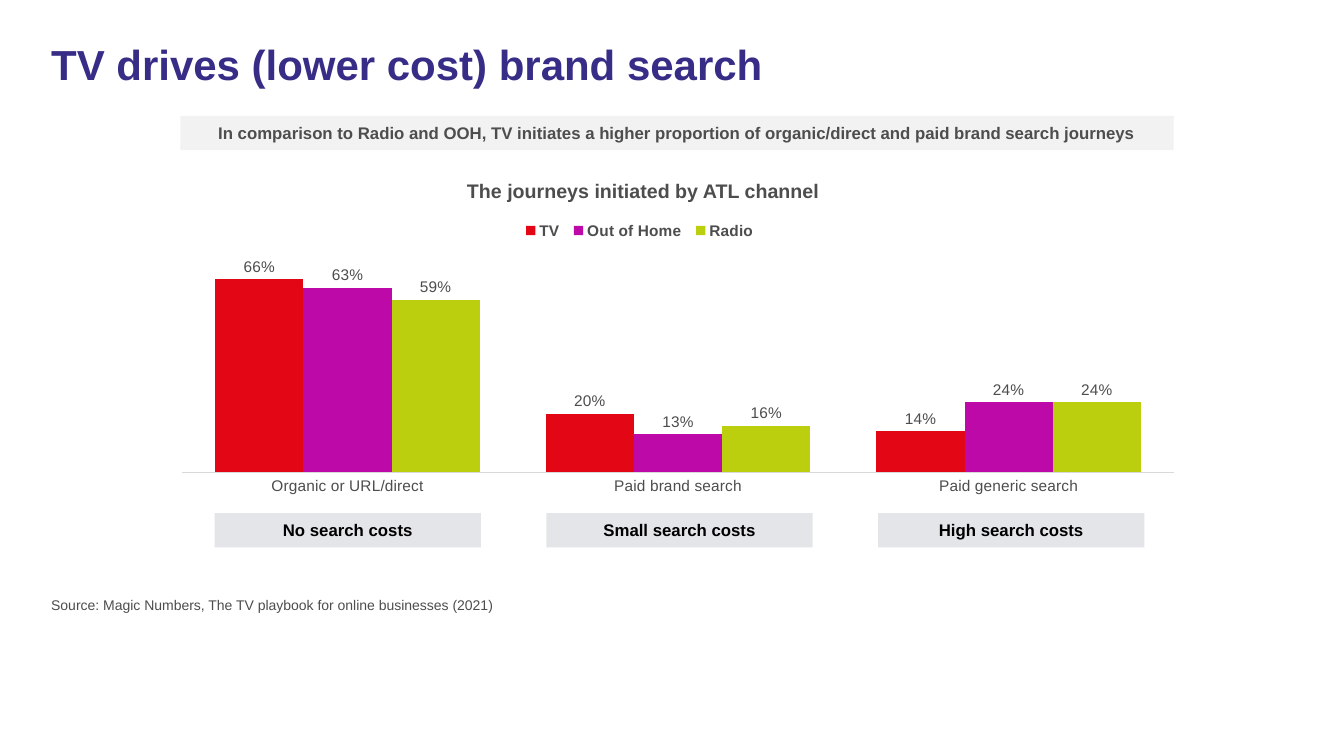
from lxml import etree
from pptx import Presentation
from pptx.chart.data import CategoryChartData
from pptx.dml.color import RGBColor
from pptx.enum.chart import (XL_CHART_TYPE, XL_LABEL_POSITION, XL_LEGEND_POSITION,
                             XL_TICK_LABEL_POSITION, XL_TICK_MARK)
from pptx.enum.shapes import MSO_SHAPE
from pptx.enum.text import MSO_ANCHOR, PP_ALIGN
from pptx.oxml.ns import qn
from pptx.util import Inches, Pt

COLUMNS = XL_CHART_TYPE.COLUMN_CLUSTERED
OUTSIDE_END = XL_LABEL_POSITION.OUTSIDE_END
LEGEND_BOTTOM = XL_LEGEND_POSITION.BOTTOM
NO_TICK = XL_TICK_MARK.NONE
NO_TICK_LABELS = XL_TICK_LABEL_POSITION.NONE
RECTANGLE = MSO_SHAPE.RECTANGLE
TOP, MIDDLE = MSO_ANCHOR.TOP, MSO_ANCHOR.MIDDLE
LEFT, CENTER = PP_ALIGN.LEFT, PP_ALIGN.CENTER

FONT = "Arial"
GREY, INDIGO, BLACK = "4D4D4D", "372D87", "000000"
MARGIN, TEXT_WIDTH = 0.41, 12.4
BAR_HEIGHT = 0.34

CATEGORIES = ["Organic or URL/direct", "Paid brand search", "Paid generic search"]
CHANNELS = [
    ("TV", "E30615", (0.66, 0.20, 0.14)),
    ("Out of Home", "BD09A7", (0.63, 0.13, 0.24)),
    ("Radio", "BCCF0F", (0.59, 0.16, 0.24)),
]
COSTS = ["No search costs", "Small search costs", "High search costs"]


def color(hex_string):
    return RGBColor.from_string(hex_string)


def style_font(font, size, hex_string, bold=False):
    font.name = FONT
    font.size = Pt(size)
    font.bold = bold
    font.color.rgb = color(hex_string)


def write(shape, text, size, hex_string, bold, align, anchor):
    frame = shape.text_frame
    frame.word_wrap = True
    frame.vertical_anchor = anchor
    frame.text = text
    para = frame.paragraphs[0]
    para.alignment = align
    style_font(para.runs[0].font, size, hex_string, bold)
    return para


def add_text(page, box, text, size, hex_string, bold=False, align=LEFT):
    shape = page.shapes.add_textbox(*map(Inches, box))
    return write(shape, text, size, hex_string, bold, align, TOP)


def add_bar(page, box, text, fill, hex_string):
    """Add a flat filled strip with a bold centred caption."""
    bar = page.shapes.add_shape(RECTANGLE, *map(Inches, box))
    bar.shadow.inherit = False
    bar.fill.solid()
    bar.fill.fore_color.rgb = color(fill)
    bar.line.fill.background()
    write(bar, text, 12, hex_string, True, CENTER, MIDDLE)


def place(parent, before, shares, inner=False):
    """Fix a chart part at x, y, width, height given as shares of the chart."""
    for old in parent.findall(qn("c:layout")):
        parent.remove(old)
    layout = etree.Element(qn("c:layout"))
    manual = etree.SubElement(layout, qn("c:manualLayout"))
    settings = [("layoutTarget", "inner")] if inner else []
    settings += [("xMode", "edge"), ("yMode", "edge")]
    settings += zip("xywh", map(str, shares))
    for name, value in settings:
        etree.SubElement(manual, qn("c:" + name)).set("val", value)
    parent.find(qn(before)).addprevious(layout)


def add_journey_chart(page, box):
    data = CategoryChartData(number_format="0%")
    data.categories = CATEGORIES
    for name, _, values in CHANNELS:
        data.add_series(name, values)
    chart = page.shapes.add_chart(COLUMNS, *map(Inches, box), data).chart
    chart.has_title = False
    style_font(chart.font, 12, BLACK, True)

    plot = chart.plots[0]
    plot.gap_width = 75
    plot.overlap = 0
    plot.vary_by_categories = False
    for series, (_, fill, _) in zip(plot.series, CHANNELS):
        series.format.fill.solid()
        series.format.fill.fore_color.rgb = color(fill)
        labels = series.data_labels
        labels.show_value = True
        labels.position = OUTSIDE_END
        labels.number_format = "0%"
        labels.number_format_is_linked = False
        style_font(labels.font, 11, GREY)

    category_axis = chart.category_axis
    category_axis.major_tick_mark = NO_TICK
    category_axis.format.line.color.rgb = color("D9D9D9")
    category_axis.format.line.width = Pt(0.75)
    style_font(category_axis.tick_labels.font, 11, GREY)

    value_axis = chart.value_axis
    value_axis.minimum_scale = 0
    value_axis.maximum_scale = 1.01
    value_axis.has_major_gridlines = False
    value_axis.tick_label_position = NO_TICK_LABELS
    value_axis.visible = False

    chart.has_legend = True
    legend = chart.legend
    legend.position = LEGEND_BOTTOM
    legend.include_in_layout = False
    style_font(legend.font, 11, GREY, True)
    plot_area = chart.element.find(".//" + qn("c:plotArea"))
    place(plot_area, "c:barChart", (0.047, 0.044, 0.928, 0.747), inner=True)
    place(chart.element.find(".//" + qn("c:legend")), "c:overlay",
          (0.36, 0.14, 0.23, 0.08))


def add_cost_bars(page, left, top, pitch):
    for column, cost in enumerate(COSTS):
        box = (left + column * pitch, top, 2.64, BAR_HEIGHT)
        add_bar(page, box, cost, "E3E5E9", BLACK)


def main():
    deck = Presentation()
    deck.slide_width, deck.slide_height = Inches(13.33), Inches(7.5)
    page = deck.slides.add_slide(deck.slide_layouts[6])

    add_bar(page, (1.79, 1.15, 9.85, BAR_HEIGHT),
            "In comparison to Radio and OOH, TV initiates a higher proportion of "
            "organic/direct and paid brand search journeys", "F2F2F2", GREY)
    add_journey_chart(page, (1.31, 1.58, 10.6, 3.93))
    title = add_text(page, (MARGIN, 0.39, TEXT_WIDTH, 0.62),
                     "TV drives (lower cost) brand search", 30, INDIGO, bold=True)
    title.line_spacing = 0.9
    add_text(page, (MARGIN, 5.87, TEXT_WIDTH, 0.33),
             "Source: Magic Numbers, The TV playbook for online businesses (2021)",
             10, GREY)
    add_text(page, (3.75, 1.73, 5.26, BAR_HEIGHT),
             "The journeys initiated by ATL channel", 14, GREY, bold=True, align=CENTER)
    add_cost_bars(page, left=2.13, top=5.09, pitch=3.29)
    deck.save("out.pptx")


if __name__ == "__main__":
    main()
